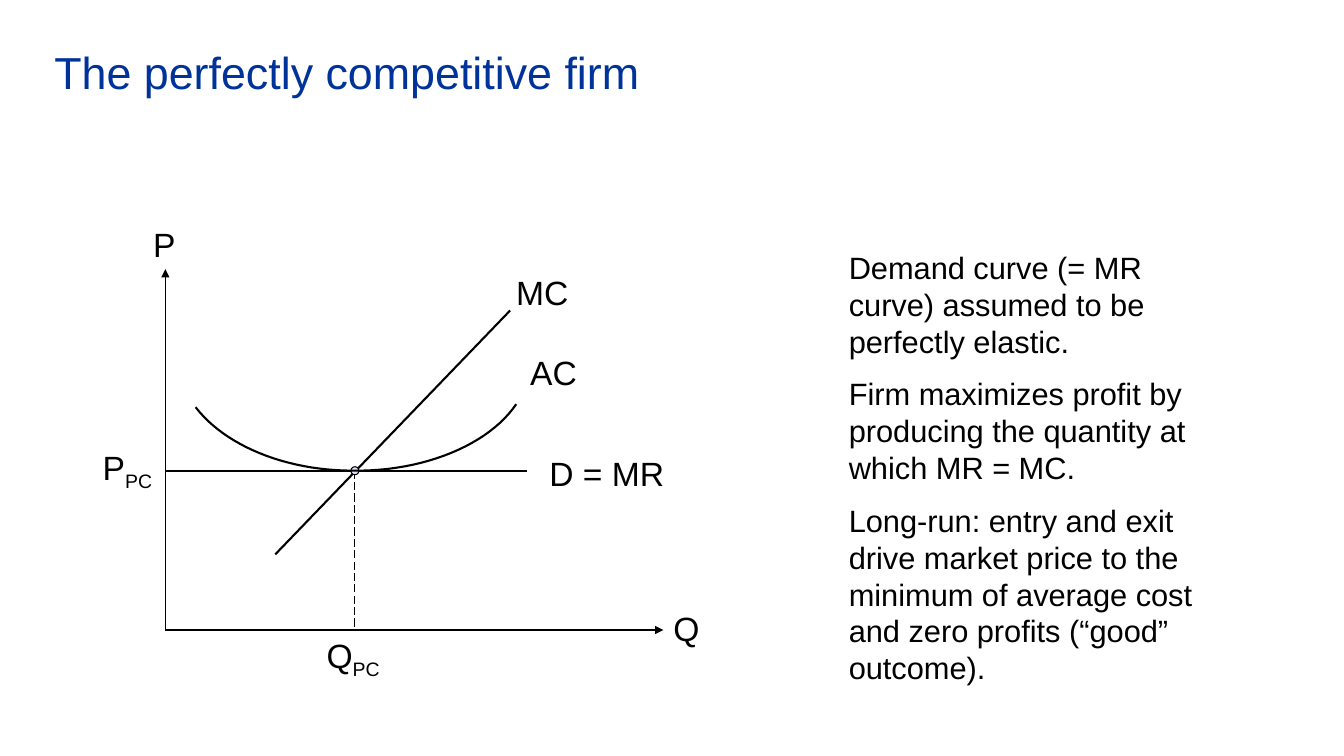
from collections import namedtuple
from dataclasses import dataclass

from lxml import etree
from pptx import Presentation
from pptx import util as u
from pptx.dml.color import RGBColor
from pptx.enum import dml, shapes, text
from pptx.oxml.ns import qn

PX = u.Inches(1) // 100
Box = namedtuple("Box", "left top width height")


@dataclass(frozen=True)
class Theme:
    """Colours, font, type sizes and line widths of the deck."""
    font: str = "Arial"
    title: RGBColor = RGBColor(0x00, 0x33, 0x99)
    ink: RGBColor = RGBColor(0x00, 0x00, 0x00)
    dot: RGBColor = RGBColor(0xE1, 0xE1, 0xFF)
    title_size: int = 32
    label_size: int = 24
    note_size: int = 22
    note_gap: int = 11
    thin: float = 0.75
    thick: float = 1.5


THEME = Theme()

LABELS = [
    ("P", "", -22, -50, 125),
    ("Q", "", 494, 331, 125),
    ("MC", "", 338, -2, 125),
    ("AC", "", 352, 77, 97),
    ("D = MR", "", 371, 177, 188),
    ("P", "PC", -72, 171, 125),
    ("Q", "PC", 150, 358, 125),
]

AVERAGE_COST = [
    [(348, 134), (321, 174), (257, 201), (186, 200)],
    [(186, 200), (119, 200), (59, 175), (30, 137)],
]

NOTES = [
    "Demand curve (= MR curve) assumed to be perfectly elastic.",
    "Firm maximizes profit by producing the quantity at which MR = MC.",
    "Long-run: entry and exit drive market price to the minimum of "
    "average cost and zero profits (“good” outcome).",
]


def add_text(page, box, paragraphs, size, color, anchor=text.MSO_ANCHOR.TOP):
    """Add a wrapped text box of plain paragraphs and return its frame."""
    frame = page.shapes.add_textbox(*(PX * side for side in box)).text_frame
    frame.word_wrap = True
    frame.vertical_anchor = anchor
    frame.text = "\n".join(paragraphs)
    for para in frame.paragraphs:
        style_paragraph(para, size, color)
    return frame


def style_paragraph(para, size, color):
    """Give every run of a paragraph the theme font."""
    for span in para.runs:
        span.font.name = THEME.font
        span.font.size = u.Pt(size)
        span.font.color.rgb = color


def add_label(page, box, name, subscript):
    """Add a diagram label with an optional subscript."""
    frame = add_text(page, box, [name], THEME.label_size, THEME.ink)
    if subscript:
        para = frame.paragraphs[0]
        span = para.add_run()
        span.text = subscript
        style_paragraph(para, THEME.label_size, THEME.ink)
        span.font._element.set("baseline", "-25000")


def add_line(page, box, start, end, width, arrow=False, dashed=False):
    """Add a straight line between two points measured from the box corner."""
    ends = [PX * (corner + offset) for point in (start, end)
            for corner, offset in zip(box[:2], point)]
    line = page.shapes.add_connector(shapes.MSO_CONNECTOR.STRAIGHT, *ends)
    line.line.color.rgb = THEME.ink
    line.line.width = u.Pt(width)
    if dashed:
        line.line.dash_style = dml.MSO_LINE.LONG_DASH
    if arrow:
        outline = line.line._get_or_add_ln()
        etree.SubElement(outline, qn("a:tailEnd"), type="triangle")
    etree.SubElement(line._element.spPr, qn("a:effectLst"))


def bezier_point(controls, t):
    """Return the point at t on a cubic curve."""
    weights = ((1 - t) ** 3, 3 * t * (1 - t) ** 2, 3 * t * t * (1 - t), t ** 3)
    return tuple(sum(weight * value for weight, value in zip(weights, axis))
                 for axis in zip(*controls))


def add_curve(page, box, segments, steps=24):
    """Draw an open curve through cubic segments."""
    offsets = [segments[0][0]] + [
        bezier_point(controls, step / steps)
        for controls in segments for step in range(1, steps + 1)]
    points = [(round(PX * (box.left + x)), round(PX * (box.top + y)))
              for x, y in offsets]
    builder = page.shapes.build_freeform(*points[0], scale=1.0)
    builder.add_line_segments(points[1:], close=False)
    curve = builder.convert_to_shape()
    curve.shadow.inherit = False
    curve.fill.background()
    curve.line.color.rgb = THEME.ink
    curve.line.width = u.Pt(THEME.thick)


def add_dot(page, box, center, size):
    """Mark a point of the diagram with a small circle."""
    left, top = (corner + offset - size // 2
                 for corner, offset in zip(box[:2], center))
    dot = page.shapes.add_shape(
        shapes.MSO_SHAPE.OVAL, PX * left, PX * top, PX * size, PX * size)
    dot.shadow.inherit = False
    dot.fill.solid()
    dot.fill.fore_color.rgb = THEME.dot
    dot.line.color.rgb = THEME.ink
    dot.line.width = u.Pt(THEME.thin)


def draw_title(page, box):
    """Place the slide title."""
    add_text(page, box, ["The perfectly competitive firm"],
             THEME.title_size, THEME.title, text.MSO_ANCHOR.MIDDLE)


def draw_diagram(page, box):
    """Draw the cost and demand diagram, with its axes along the box."""
    origin = (0, box.height)
    optimum = quantity, price = (188, 200)
    add_line(page, box, optimum, (quantity, box.height), THEME.thin, dashed=True)
    add_line(page, box, (359, price), (0, price), THEME.thick)
    add_line(page, box, origin, (0, 0), THEME.thin, arrow=True)
    add_line(page, box, origin, (box.width, box.height), THEME.thin, arrow=True)
    add_line(page, box, (109, 283), (342, 41), THEME.thick)
    add_dot(page, box, optimum, 8)
    add_curve(page, box, AVERAGE_COST)
    for name, subscript, x, y, width in LABELS:
        add_label(page, Box(box.left + x, box.top + y, width, 50), name, subscript)


def draw_notes(page, box):
    """Write the explanatory paragraphs."""
    frame = add_text(page, box, NOTES, THEME.note_size, THEME.ink)
    for para in frame.paragraphs[1:]:
        para.space_before = u.Pt(THEME.note_gap)


def main():
    """Build the deck and save it."""
    deck = Presentation()
    deck.slide_width, deck.slide_height = PX * 1333, PX * 750
    page = deck.slides.add_slide(deck.slide_layouts[6])
    draw_title(page, Box(44, 25, 1245, 92))
    draw_diagram(page, Box(164, 267, 494, 358))
    draw_notes(page, Box(832, 242, 395, 380))
    deck.save("out.pptx")


if __name__ == "__main__":
    main()
